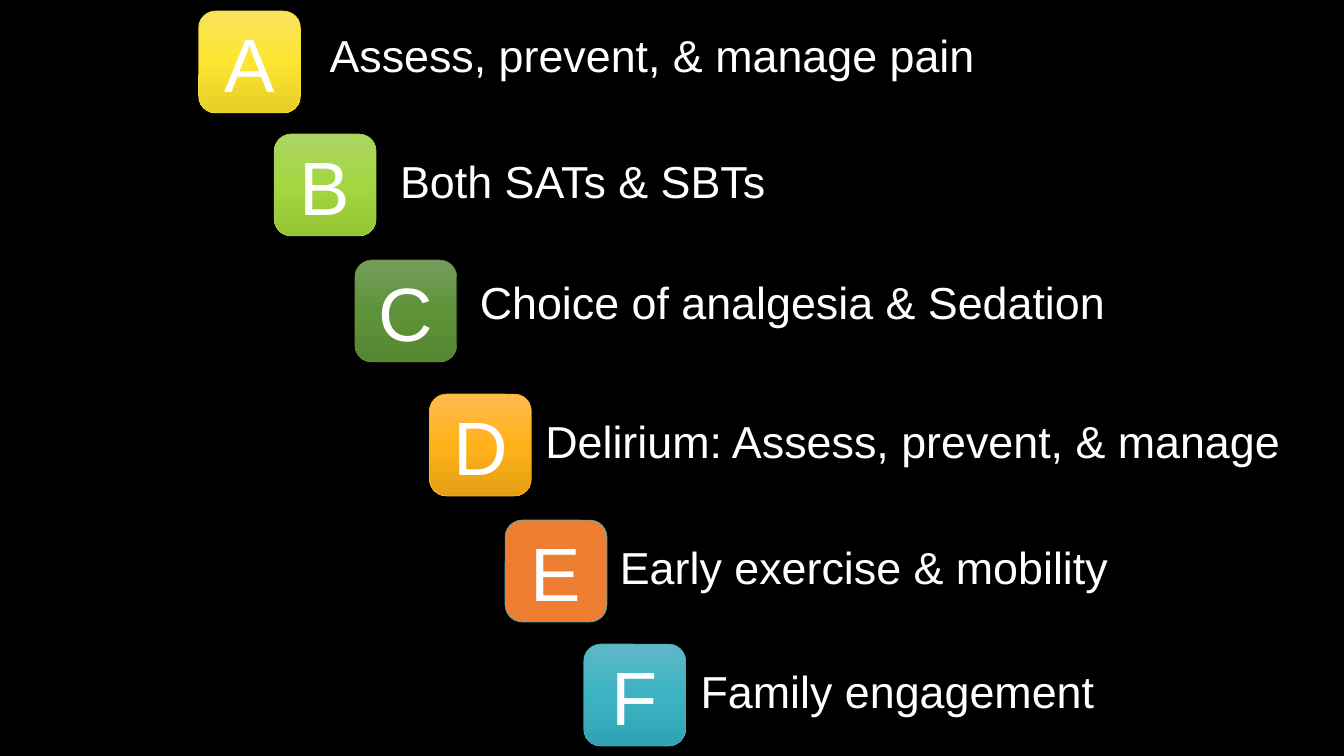
from copy import deepcopy

from pptx import Presentation
from pptx.dml.color import RGBColor
from pptx.enum.shapes import MSO_SHAPE
from pptx.enum.text import MSO_ANCHOR, MSO_AUTO_SIZE, PP_ALIGN
from pptx.util import Inches, Pt

FONT = "Arial"
WHITE = "FFFFFF"
TILE_SIZE = 1.01
LABEL_HEIGHT = 0.64

STEPS = [
    ("A", (1.97, 0.11), ("F8E35C", "FDE531", "E5CE27"), "F4DE3A",
     "Assess, prevent, & manage pain", (3.17, 0.23, 6.9)),
    ("B", (2.72, 1.33), ("ACD564", "A4D642", "94C533"), "A2CF49",
     "Both SATs & SBTs", (3.87, 1.48, 9.35)),
    ("C", (3.52, 2.58), ("749C5C", "5F9339", "54862F"), "608F3D",
     "Choice of analgesia & Sedation", (4.66, 2.68, 7.11)),
    ("D", (4.26, 3.91), ("FFBA4F", "FFB219", "E59F14"), "FCB11C",
     "Delirium: Assess, prevent, & manage", (5.31, 4.06, 7.55)),
    ("E", (5.01, 5.16), ("ED7D31",), "41AEBD",
     "Early exercise & mobility", (6.05, 5.31, 6.3)),
    ("F", (5.79, 6.39), ("5FB7C5", "3BB3C3", "2FA3B3"), "41AEBD",
     "Family engagement", (6.85, 6.54, 6.02)),
]


def color(value):
    """Turn a hex string into a colour."""
    return RGBColor.from_string(value)


def write_text(frame, text, size, align=PP_ALIGN.LEFT, anchor=MSO_ANCHOR.TOP):
    """Put one formatted line of white text into a frame."""
    frame.word_wrap = True
    frame.vertical_anchor = anchor
    para = frame.paragraphs[0]
    para.alignment = align
    span = para.add_run()
    span.text = text
    span.font.name = FONT
    span.font.size = Pt(size)
    span.font.color.rgb = color(WHITE)


def paint(shape, colors):
    """Fill a shape with one colour or a three-stop vertical gradient."""
    if len(colors) == 1:
        shape.fill.solid()
        shape.fill.fore_color.rgb = color(colors[0])
        return
    shape.fill.gradient()
    shape.fill.gradient_angle = 270
    first = shape.fill.gradient_stops[0]._gs
    first.addnext(deepcopy(first))
    for index, stop in enumerate(shape.fill.gradient_stops):
        stop.position = index / 2
        stop.color.rgb = color(colors[index])


def add_tile(page, letter, left, top, colors, outline):
    """Add a rounded tile that carries a large letter."""
    tile = page.shapes.add_shape(
        MSO_SHAPE.ROUNDED_RECTANGLE, Inches(left), Inches(top),
        Inches(TILE_SIZE), Inches(TILE_SIZE))
    tile.shadow.inherit = False
    paint(tile, colors)
    tile.line.color.rgb = color(outline)
    tile.line.width = Pt(0.5)
    write_text(tile.text_frame, letter, 54,
               align=PP_ALIGN.CENTER, anchor=MSO_ANCHOR.MIDDLE)


def add_label(page, text, left, top, width):
    """Add the wording that stands beside a tile."""
    box = page.shapes.add_textbox(
        Inches(left), Inches(top), Inches(width), Inches(LABEL_HEIGHT))
    write_text(box.text_frame, text, 32)
    box.text_frame.auto_size = MSO_AUTO_SIZE.SHAPE_TO_FIT_TEXT


def main():
    """Build the slide and save it."""
    deck = Presentation()
    deck.slide_width = Inches(13.33)
    deck.slide_height = Inches(7.5)
    page = deck.slides.add_slide(deck.slide_layouts[6])
    page.background.fill.solid()
    page.background.fill.fore_color.rgb = color("000000")
    for letter, corner, colors, outline, text, place in STEPS:
        add_tile(page, letter, *corner, colors, outline)
        add_label(page, text, *place)
    deck.save("out.pptx")


if __name__ == "__main__":
    main()
